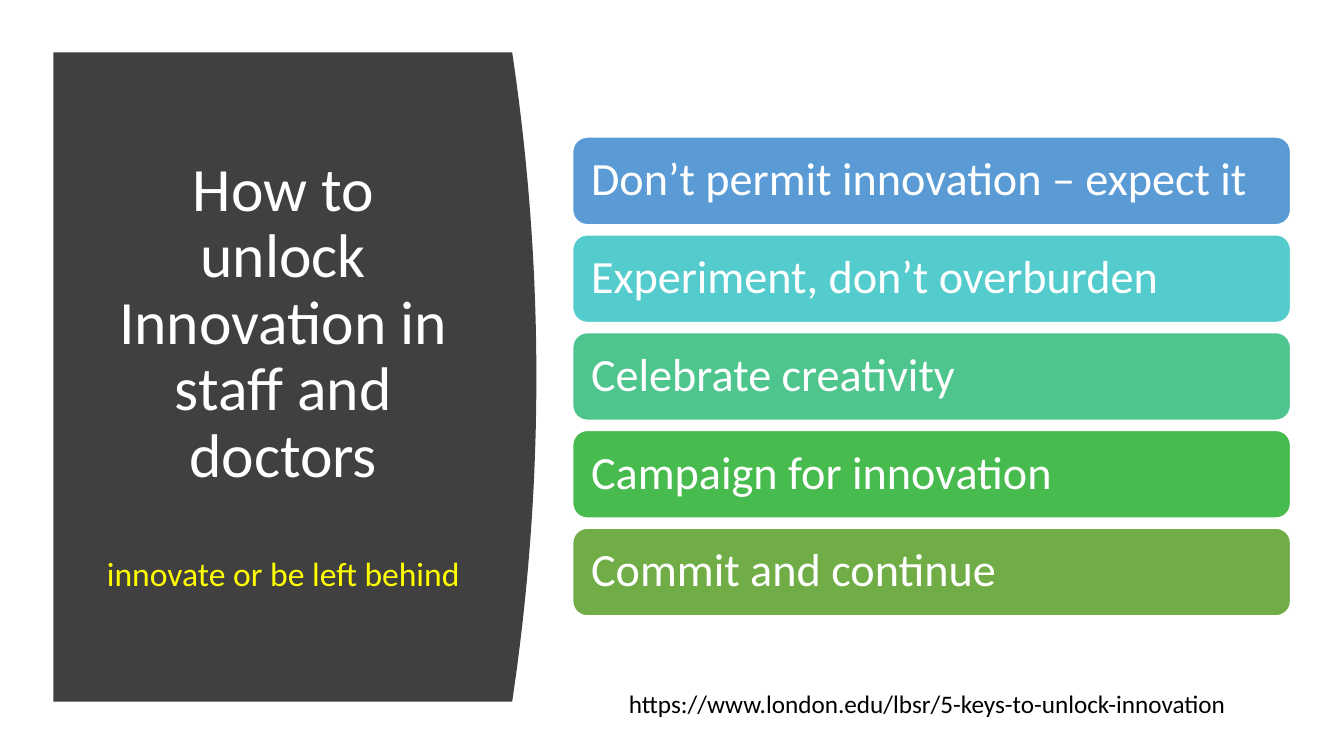
from pptx import Presentation
from pptx.dml.color import RGBColor
from pptx.enum.shapes import MSO_SHAPE
from pptx.enum.text import MSO_ANCHOR, MSO_AUTO_SIZE, PP_ALIGN
from pptx.util import Inches, Pt

ROUNDED = MSO_SHAPE.ROUNDED_RECTANGLE
MIDDLE = MSO_ANCHOR.MIDDLE
FIT_SHAPE = MSO_AUTO_SIZE.SHAPE_TO_FIT_TEXT
LEFT, CENTER = PP_ALIGN.LEFT, PP_ALIGN.CENTER

WHITE = RGBColor(0xFF, 0xFF, 0xFF)
BLACK = RGBColor(0x00, 0x00, 0x00)
YELLOW = RGBColor(0xFF, 0xFF, 0x00)
CHARCOAL = RGBColor(0x40, 0x40, 0x40)
BLUE = RGBColor(0x5B, 0x9B, 0xD5)
TURQUOISE = RGBColor(0x54, 0xCC, 0xCD)
SEA_GREEN = RGBColor(0x4D, 0xC5, 0x8D)
GREEN = RGBColor(0x48, 0xBB, 0x4F)
OLIVE = RGBColor(0x70, 0xAD, 0x47)

KEYS = [
    ("Don’t permit innovation – expect it", BLUE),
    ("Experiment, don’t overburden", TURQUOISE),
    ("Celebrate creativity", SEA_GREEN),
    ("Campaign for innovation", GREEN),
    ("Commit and continue", OLIVE),
]
KEY_TOP, KEY_PITCH = 1.36, 0.97


class SlideBuilder:
    font_name = "Calibri"
    line_spacing = 0.9

    def __init__(self, slide):
        self.shapes = slide.shapes

    def add_text(self, paragraph, text, size, color, align=LEFT):
        paragraph.alignment = align
        paragraph.line_spacing = self.line_spacing
        run = paragraph.add_run()
        run.text = text
        run.font.name = self.font_name
        run.font.size = Pt(size)
        run.font.color.rgb = color

    def curved_panel(self, left, top, width, height, bulge, color, steps=40):
        """Draw a panel whose right side swells outward as a parabola."""
        edge = []
        for step in range(steps + 1):
            t = step / steps
            x = left + width - bulge * (2 * t - 1) ** 2
            edge.append((Inches(x), Inches(top + height * t)))
        outline = self.shapes.build_freeform(Inches(left), Inches(top))
        outline.add_line_segments(edge + [(Inches(left), Inches(top + height))])
        panel = outline.convert_to_shape()
        panel.shadow.inherit = False
        panel.fill.solid()
        panel.fill.fore_color.rgb = color
        panel.line.fill.background()

    def text_box(self, left, top, width, height):
        box = self.shapes.add_textbox(
            Inches(left), Inches(top), Inches(width), Inches(height))
        return box.text_frame

    def heading(self, title, tagline):
        frame = self.text_box(0.94, 1.11, 3.74, 5.24)
        frame.word_wrap = True
        frame.vertical_anchor = MIDDLE
        self.add_text(frame.paragraphs[0], title, 44, WHITE, CENTER)
        tagline_paragraph = frame.add_paragraph()
        tagline_paragraph.space_before = Pt(48)
        self.add_text(tagline_paragraph, tagline, 24, YELLOW, CENTER)

    def key_bar(self, top, text, color):
        bar = self.shapes.add_shape(
            ROUNDED, Inches(5.68), Inches(top), Inches(7.12), Inches(0.87))
        bar.shadow.inherit = False
        bar.fill.solid()
        bar.fill.fore_color.rgb = color
        bar.line.color.rgb = WHITE
        bar.line.width = Pt(1)
        frame = bar.text_frame
        frame.word_wrap = True
        frame.vertical_anchor = MIDDLE
        frame.margin_left = frame.margin_right = Inches(0.14)
        frame.margin_top = frame.margin_bottom = Inches(0.14)
        self.add_text(frame.paragraphs[0], text, 33, WHITE)

    def source_address(self, address):
        frame = self.text_box(6.14, 6.78, 6.2, 0.4)
        frame.word_wrap = False
        frame.auto_size = FIT_SHAPE
        address_paragraph = frame.paragraphs[0]
        self.add_text(address_paragraph, address, 18, BLACK)
        address_paragraph.line_spacing = 1.0


def main():
    presentation = Presentation()
    presentation.slide_width = Inches(13.33)
    presentation.slide_height = Inches(7.5)
    blank_layout = presentation.slide_layouts[6]
    builder = SlideBuilder(presentation.slides.add_slide(blank_layout))

    builder.curved_panel(0.53, 0.52, 4.79, 6.44, 0.24, CHARCOAL)
    builder.heading("How to unlock Innovation in staff and doctors",
                    "innovate or be left behind")
    for index, (key, color) in enumerate(KEYS):
        builder.key_bar(KEY_TOP + index * KEY_PITCH, key, color)
    builder.source_address(
        "https://www.london.edu/lbsr/5-keys-to-unlock-innovation")

    presentation.save("out.pptx")


if __name__ == "__main__":
    main()
